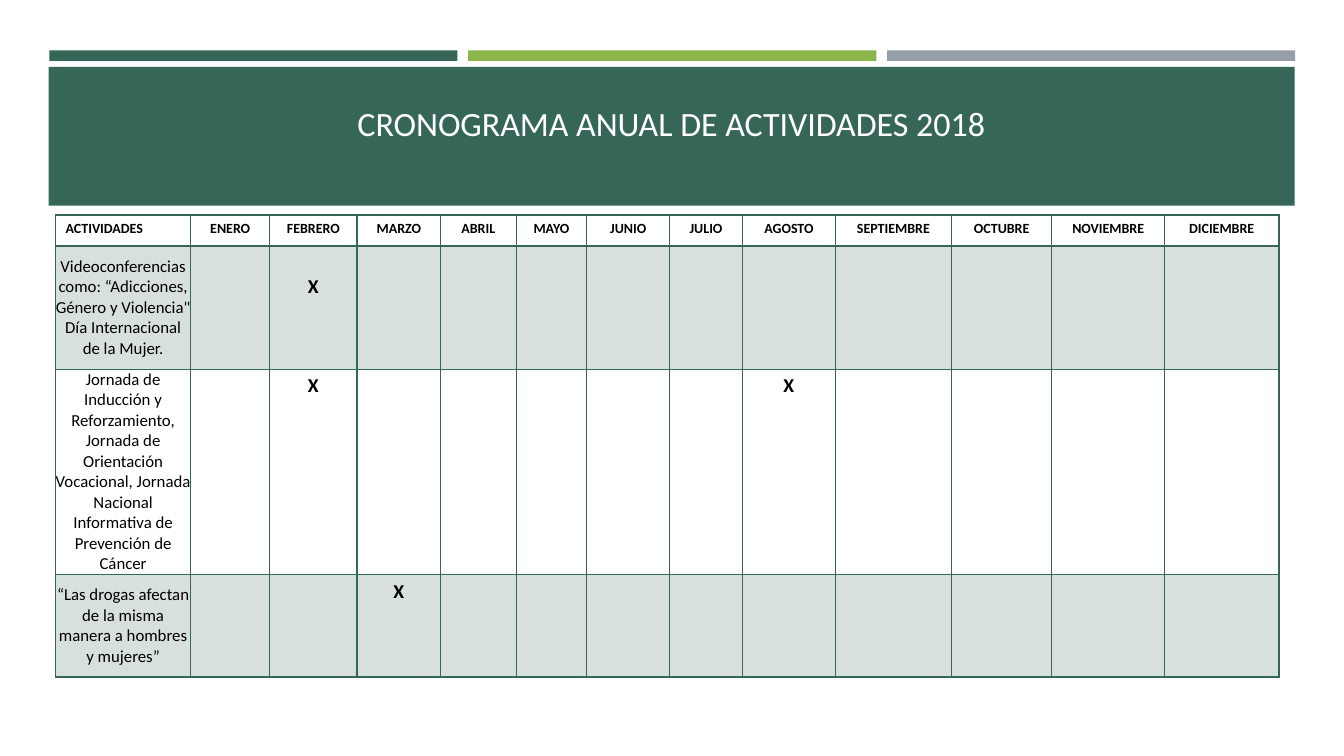
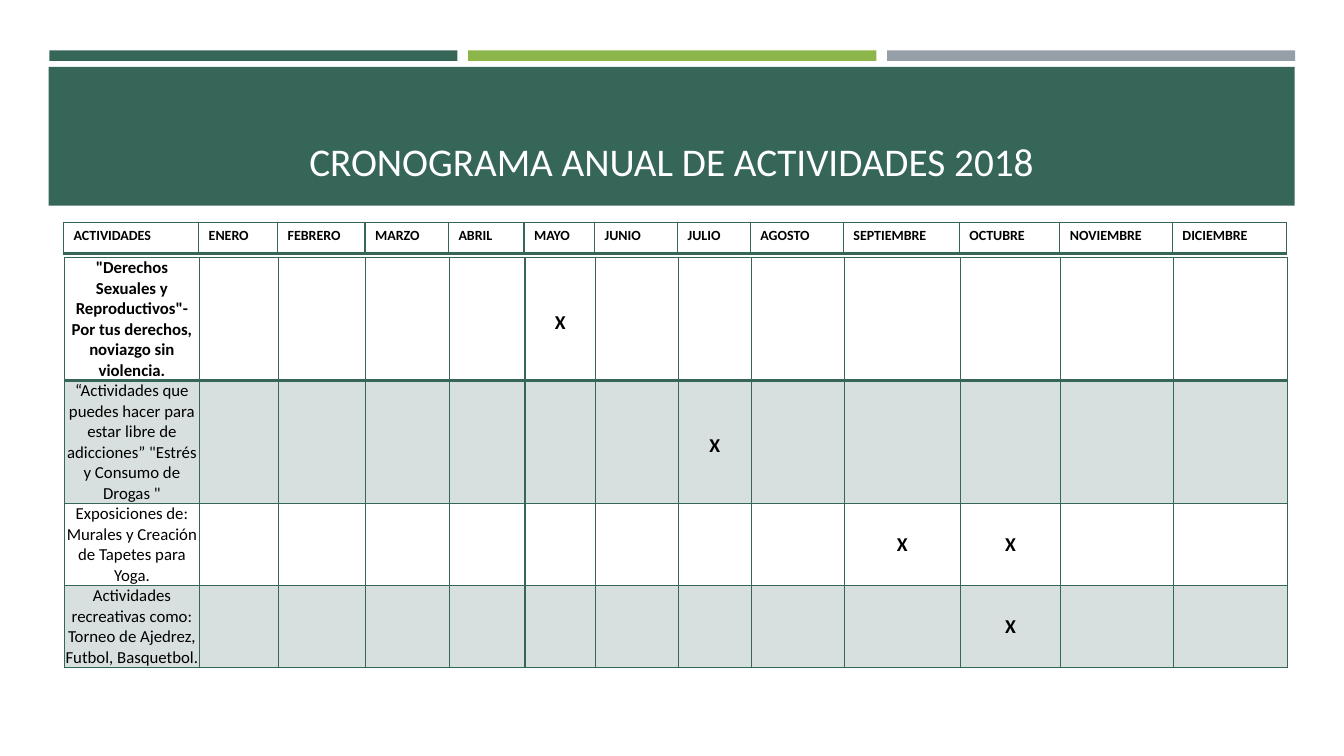
from pptx import Presentation
from pptx.dml.color import RGBColor
from pptx.enum.shapes import MSO_SHAPE
from pptx.enum.text import MSO_ANCHOR, MSO_AUTO_SIZE, PP_ALIGN
from pptx.oxml import parse_xml
from pptx.oxml.ns import nsdecls
from pptx.util import Pt

GREEN, LIME, GRAY = "366658", "8CB64A", "969FA7"
PALE_GREEN, WHITE, BLACK = "D7E0DE", "FFFFFF", "000000"
FONT = "Calibri"
TITLE = "CRONOGRAMA ANUAL DE ACTIVIDADES 2018"
HEADINGS = ["ACTIVIDADES", "ENERO", "FEBRERO", "MARZO", "ABRIL", "MAYO", "JUNIO", "JULIO",
            "AGOSTO", "SEPTIEMBRE", "OCTUBRE", "NOVIEMBRE", "DICIEMBRE"]
COLUMN_WIDTHS = [96.5, 56.4, 62.5, 59.6, 54, 50.4, 59.3, 52, 66.4, 82.9, 71.8, 80.4, 81.8]
HEADER_HEIGHT = 22.3
LABEL_LINE = 14.65
MARK_LINE = 17.1

FIRST_ACTIVITIES = [
    ("Videoconferencias como: “Adicciones, Género y Violencia\" Día Internacional de la Mujer.",
     6, ["FEBRERO"], 1),
    ("Jornada de Inducción y Reforzamiento, Jornada de Orientación Vocacional, "
     "Jornada Nacional Informativa de Prevención de Cáncer",
     10, ["FEBRERO", "AGOSTO"], 0),
    ("“Las drogas afectan de la misma manera a hombres y mujeres”", 5, ["MARZO"], 0),
]
SECOND_ACTIVITIES = [
    ("\"Derechos Sexuales y Reproductivos\"- Por tus derechos, noviazgo sin violencia.",
     6, ["MAYO"], 2),
    ("“Actividades que puedes hacer para estar libre de adicciones” "
     "\"Estrés y Consumo de Drogas \"", 6, ["JULIO"], 2),
    ("Exposiciones de: Murales y Creación de Tapetes para Yoga.",
     4, ["SEPTIEMBRE", "OCTUBRE"], 1),
    ("Actividades recreativas como: Torneo de Ajedrez, Futbol, Basquetbol.",
     4, ["OCTUBRE"], 1),
]
SLIDES = [
    (24.3, 33, [(39.7, 153.6, PP_ALIGN.CENTER, FIRST_ACTIVITIES)]),
    (28, 3.6, [(46, 184, None, SECOND_ACTIVITIES), (45.4, 158.8, PP_ALIGN.LEFT, [])]),
]


def color(value):
    return RGBColor.from_string(value)


def write(frame, text, size, bold, alignment, text_color=BLACK):
    frame.text = text
    para = frame.paragraphs[0]
    para.alignment = alignment
    para.font.name = FONT
    para.font.size = Pt(size)
    para.font.bold = bold
    para.font.color.rgb = color(text_color)


deck = Presentation()
deck.slide_width, deck.slide_height = Pt(960), Pt(540)
layout = deck.slide_layouts[5]
layout_title = layout.placeholders[0]
layout_title.left, layout_title.top = Pt(45.4), Pt(57.6)
layout_title.width, layout_title.height = Pt(868.3), Pt(77.8)
layout_title.text_frame.vertical_anchor = MSO_ANCHOR.BOTTOM

pages = [deck.slides.add_slide(layout) for entry in SLIDES]

bands = [(35.2 + 299.2 * index, 36, 291.6, 7.6, fill)
         for index, fill in enumerate([GREEN, LIME, GRAY])]
bands.append((34.8, 47.8, 889.9, 99.2, GREEN))
for index, (left, top, width, height, fill) in enumerate(bands):
    band = pages[0].shapes.add_shape(MSO_SHAPE.RECTANGLE, Pt(left), Pt(top), Pt(width), Pt(height))
    band.shadow.inherit = False
    band.fill.solid()
    band.fill.fore_color.rgb = color(fill)
    band.line.fill.background()
    band.element.nvSpPr.cNvPr.set("id", str(100 + index))
    layout.shapes.element.insert(2 + index, band.element)

for page, (title_size, title_margin, schedules) in zip(pages, SLIDES):
    title_frame = page.shapes.title.text_frame
    write(title_frame, TITLE, title_size, False, PP_ALIGN.CENTER, WHITE)
    title_frame.auto_size = MSO_AUTO_SIZE.NONE
    title_frame.word_wrap = True
    title_frame.margin_bottom = Pt(title_margin)

    for left, top, header_alignment, activities in schedules:
        header_rows = 0 if header_alignment is None else 1
        heights = [HEADER_HEIGHT] * header_rows + [LABEL_LINE * lines for _, lines, _, _ in activities]
        table = page.shapes.add_table(
            len(heights), len(HEADINGS), Pt(left), Pt(top),
            Pt(sum(COLUMN_WIDTHS)), Pt(sum(heights))).table
        table.first_row = False
        table.horz_banding = False
        for column, width in zip(table.columns, COLUMN_WIDTHS):
            column.width = Pt(width)

        for row_index, height in enumerate(heights):
            table.rows[row_index].height = Pt(height)
            for column_index, heading in enumerate(HEADINGS):
                cell = table.cell(row_index, column_index)
                properties = cell._tc.get_or_add_tcPr()
                for side in "LRTB":
                    line_width = 2 if side == "B" and row_index == 0 else 1
                    properties.append(parse_xml(
                        f'<a:ln{side} {nsdecls("a")} w="{Pt(line_width)}"><a:solidFill>'
                        f'<a:srgbClr val="{GREEN}"/></a:solidFill></a:ln{side}>'))
                cell.fill.solid()
                cell.fill.fore_color.rgb = color(PALE_GREEN if row_index % 2 else WHITE)

                if row_index < header_rows:
                    alignment = header_alignment if column_index else PP_ALIGN.LEFT
                    write(cell.text_frame, heading, 10, True, alignment)
                    continue
                label, lines, months, mark_offset = activities[row_index - header_rows]
                if column_index == 0:
                    write(cell.text_frame, label, 12, row_index == 0, PP_ALIGN.CENTER)
                    cell.vertical_anchor = MSO_ANCHOR.MIDDLE
                    cell.margin_left = cell.margin_right = 0
                    cell.margin_top = cell.margin_bottom = 0
                elif heading in months:
                    write(cell.text_frame, "X", 14, True, PP_ALIGN.CENTER)
                    cell.margin_top = Pt(3.6 + MARK_LINE * mark_offset)

deck.save("out.pptx")
